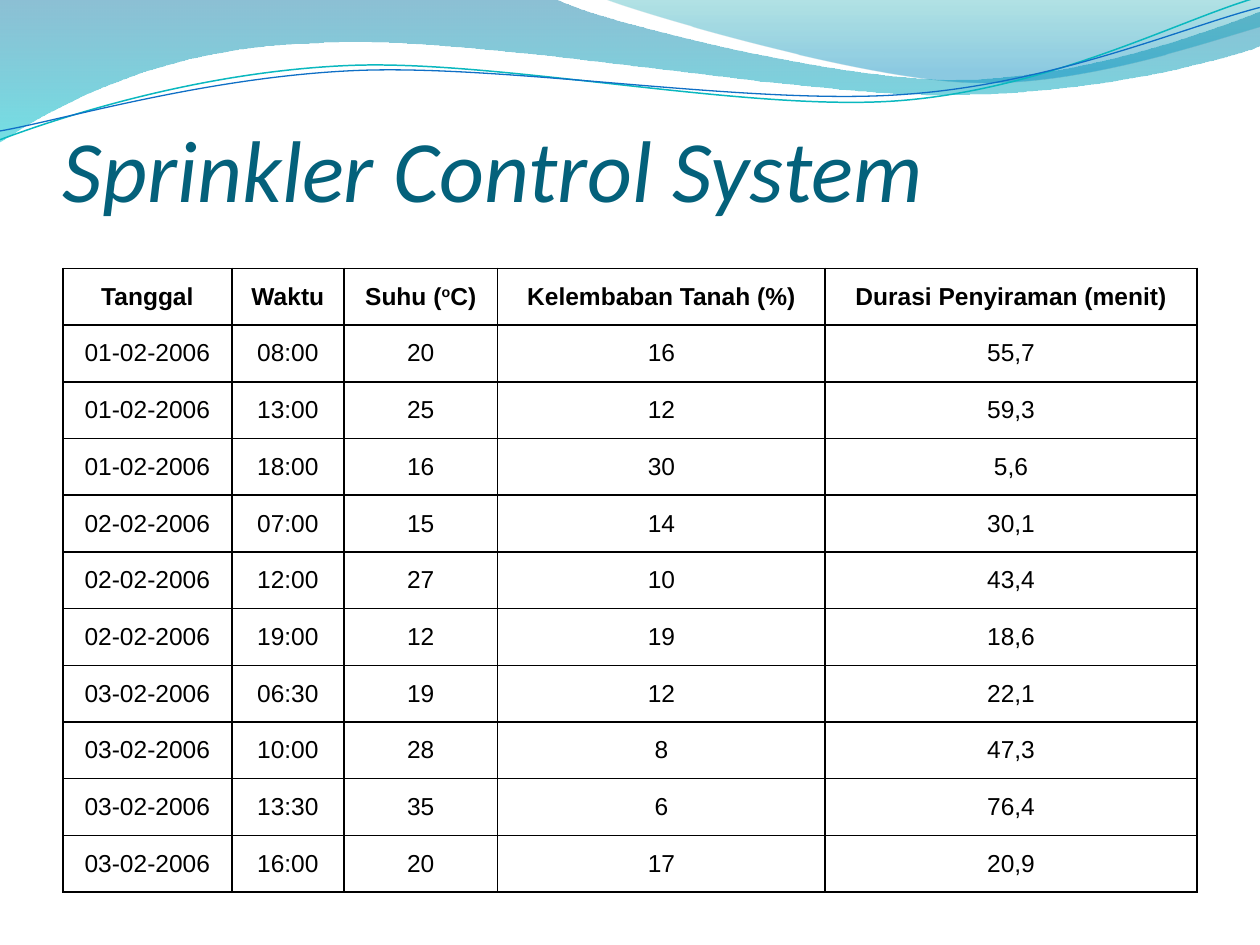
from math import cos, radians, sin

from lxml.etree import SubElement
from pptx import Presentation
from pptx.dml.color import RGBColor
from pptx.enum.text import MSO_ANCHOR, PP_ALIGN
from pptx.oxml.ns import qn
from pptx.util import Inches, Pt

WIDTH, HEIGHT = 10, 7.5
MARGIN = WIDTH * 0.05
ROW_HEIGHT = 0.45
COLUMN_WIDTHS = [1.34, 0.89, 1.22, 2.6, 2.95]
CURVE_TILT = -2.7

# Each outline is a start point, then lines (2 numbers) or Bézier curves (6 numbers).
WIDE_WAVE = [(0, 0), (4.4, -0.01), (4.76, 0.17, 6.64, 0.63, 7.58, 0.63),
             (8.53, 0.63, 9.58, 0.26, 10, 0.09), (10.01, 0.36),
             (9.83, 0.44, 8.7, 0.76, 7.46, 0.75), (6.22, 0.75, 3.82, 0.28, 2.57, 0.34),
             (1.29, 0.36, 0.46, 0.83, -0.01, 1.13), (0, 0)]
RIGHT_WAVE = [(4.79, -0.01), (5.09, 0.11, 6.82, 0.62, 7.69, 0.65),
              (8.56, 0.69, 9.61, 0.32, 10, 0.21), (10, 0), (4.79, -0.01)]
TEAL_CURVE = [(0, 1.11), (0.48, 0.93, 1.58, 0.57, 2.77, 0.52),
              (3.95, 0.47, 5.93, 0.89, 7.13, 0.8), (8.33, 0.71, 9.38, 0.15, 9.98, -0.02)]
BLUE_CURVE = [(0, 1.04), (0.47, 0.96, 1.64, 0.61, 2.83, 0.56),
              (4.03, 0.51, 5.97, 0.84, 7.17, 0.75), (8.36, 0.67, 9.41, 0.21, 10, 0.06)]

# A header cell is a list of (text, baseline shift in percent).
HEADER = [[("Tanggal", 0)], [("Waktu", 0)], [("Suhu (", 0), ("o", 30), ("C)", 0)],
          [("Kelembaban Tanah (%)", 0)], [("Durasi Penyiraman (menit)", 0)]]
READINGS = [
    ("01-02-2006", "08:00", "20", "16", "55,7"),
    ("01-02-2006", "13:00", "25", "12", "59,3"),
    ("01-02-2006", "18:00", "16", "30", "5,6"),
    ("02-02-2006", "07:00", "15", "14", "30,1"),
    ("02-02-2006", "12:00", "27", "10", "43,4"),
    ("02-02-2006", "19:00", "12", "19", "18,6"),
    ("03-02-2006", "06:30", "19", "12", "22,1"),
    ("03-02-2006", "10:00", "28", "8", "47,3"),
    ("03-02-2006", "13:30", "35", "6", "76,4"),
    ("03-02-2006", "16:00", "20", "17", "20,9"),
]


def rgb(value):
    return RGBColor.from_string(value)


def set_attrs(obj, values):
    for name, value in values.items():
        setattr(obj, name, value)


def add_run(p, text, color, **font):
    r = p.add_run()
    r.text = text
    r.font.color.rgb = rgb(color)
    set_attrs(r.font, font)
    return r


def turn(points, degrees):
    """Turn the points clockwise about the middle between the two ends."""
    (x0, y0), (x1, y1) = points[0], points[-1]
    cx, cy = (x0 + x1) / 2, (y0 + y1) / 2
    c, s = cos(radians(degrees)), sin(radians(degrees))
    return [(cx + (x - cx) * c - (y - cy) * s, cy + (x - cx) * s + (y - cy) * c)
            for x, y in points]


def add_outline(s, outline, close, tilt=0):
    """Draw the outline through all its points, then join triples into Bézier curves."""
    points = [pt for seg in outline for pt in zip(seg[::2], seg[1::2])]
    if tilt:
        points = turn(points, -tilt)
    points = [(Inches(x), Inches(y)) for x, y in points]
    builder = s.shapes.build_freeform(*points[0])
    builder.add_line_segments(points[1:], close=close)
    sp = builder.convert_to_shape()
    lines = iter(list(sp._element.iter(qn("a:lnTo"))))
    for segment in outline[1:]:
        first = next(lines)
        if len(segment) == 6:
            first.tag = qn("a:cubicBezTo")
            for line in (next(lines), next(lines)):
                first.append(line[0])
                line.getparent().remove(line)
    sp.rotation = tilt
    sp.shadow.inherit = False
    return sp


def add_wave(s, outline, stops):
    """Add a band with a downward gradient of (position, colour, opacity) stops."""
    sp = add_outline(s, outline, close=True)
    sp.line.fill.background()
    sp.fill.gradient()
    sp.fill.gradient_angle = 270
    for stop, (position, color, _) in zip(sp.fill.gradient_stops, stops):
        stop.position = position
        stop.color.rgb = rgb(color)
    colors = sp._element.spPr.iter(qn("a:srgbClr"))
    for element, (_, _, opacity) in zip(list(colors), stops):
        SubElement(element, qn("a:alpha"), val=str(opacity * 1000))


def add_curve(s, outline, color, width):
    sp = add_outline(s, outline, close=False, tilt=CURVE_TILT)
    sp.fill.background()
    sp.line.color.rgb = rgb(color)
    sp.line.width = Pt(width)


def add_title(s, text):
    box = s.shapes.add_textbox(Inches(MARGIN), Inches(0.5),
                               Inches(WIDTH - 2 * MARGIN), Inches(1.25))
    tf = box.text_frame
    set_attrs(tf, dict(word_wrap=True, vertical_anchor=MSO_ANCHOR.BOTTOM, margin_left=0,
                       margin_top=Inches(0.05), margin_right=0, margin_bottom=0))
    add_run(tf.paragraphs[0], text, "04617B", name="Calibri", size=Pt(50), italic=True)


def add_borders(cell, color, width):
    tcPr = cell._tc.get_or_add_tcPr()
    for i, side in enumerate(("lnL", "lnR", "lnT", "lnB")):
        ln = tcPr.makeelement(qn(f"a:{side}"), {"w": str(Pt(width))})
        SubElement(SubElement(ln, qn("a:solidFill")), qn("a:srgbClr"), val=color)
        tcPr.insert(i, ln)


def fill_cell(cell, runs, bold):
    cell.vertical_anchor = MSO_ANCHOR.MIDDLE
    cell.fill.solid()
    cell.fill.fore_color.rgb = rgb("FFFFFF")
    add_borders(cell, "000000", 1)
    p = cell.text_frame.paragraphs[0]
    p.alignment = PP_ALIGN.CENTER
    for text, shift in runs:
        r = add_run(p, text, "000000", name="Arial", size=Pt(14), bold=bold)
        if shift:
            r.font._element.set("baseline", str(shift * 1000))


def add_readings_table(s):
    rows = [HEADER] + [[[(value, 0)] for value in reading] for reading in READINGS]
    frame = s.shapes.add_table(len(rows), len(COLUMN_WIDTHS), Inches(MARGIN), Inches(2.13),
                               Inches(sum(COLUMN_WIDTHS)), Inches(ROW_HEIGHT * len(rows)))
    table = frame.table
    set_attrs(table, dict(first_row=False, horz_banding=False))
    for column, width in zip(table.columns, COLUMN_WIDTHS):
        column.width = Inches(width)
    for i, (row, contents) in enumerate(zip(table.rows, rows)):
        row.height = Inches(ROW_HEIGHT)
        for cell, runs in zip(row.cells, contents):
            fill_cell(cell, runs, bold=i == 0)


def main():
    prs = Presentation()
    set_attrs(prs, dict(slide_width=Inches(WIDTH), slide_height=Inches(HEIGHT)))
    s = prs.slides.add_slide(prs.slide_layouts[6])
    add_wave(s, WIDE_WAVE, [(0, "0074A1", 45), (1, "00C6CF", 55)])
    add_wave(s, RIGHT_WAVE, [(0, "00A1A9", 30), (0.8, "008BBF", 45)])
    add_curve(s, TEAL_CURVE, "0AB8BF", 0.85)
    add_curve(s, BLUE_CURVE, "0F6FC6", 0.75)
    add_title(s, "Sprinkler Control System")
    add_readings_table(s)
    prs.save("out.pptx")


if __name__ == "__main__":
    main()
